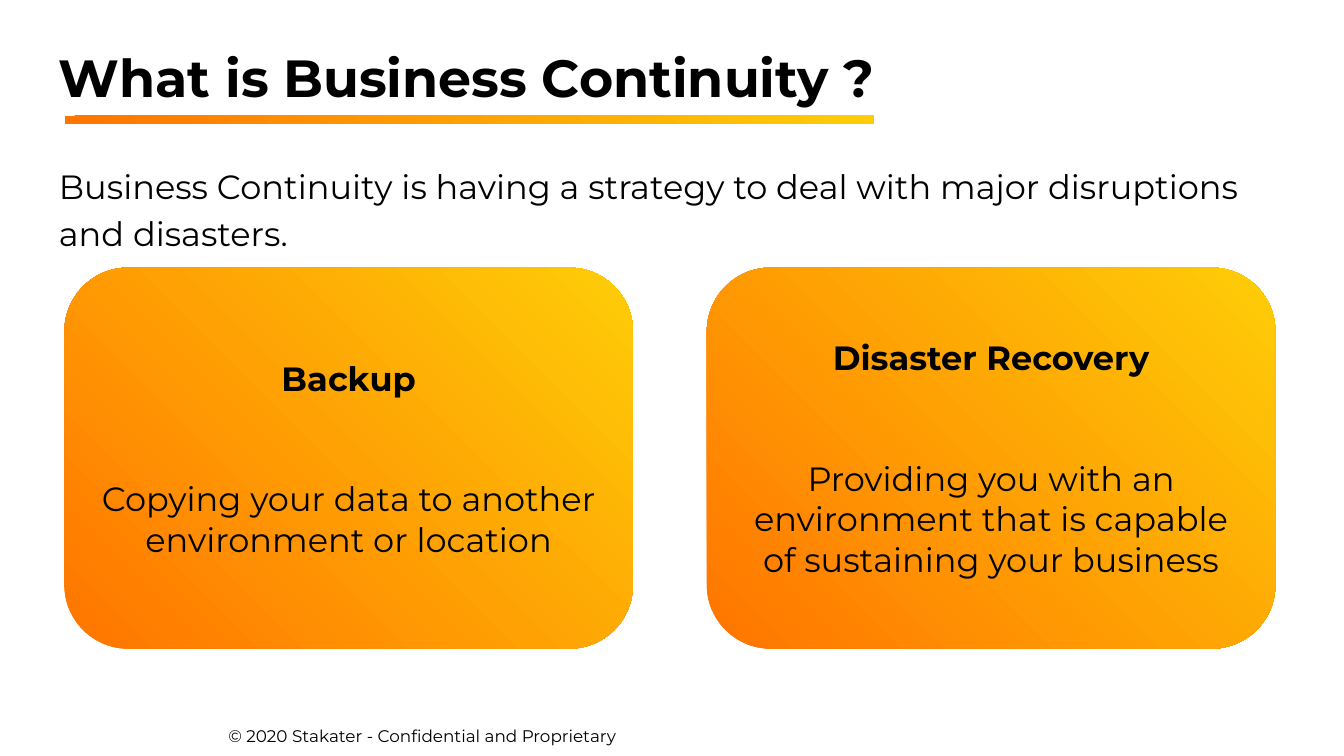
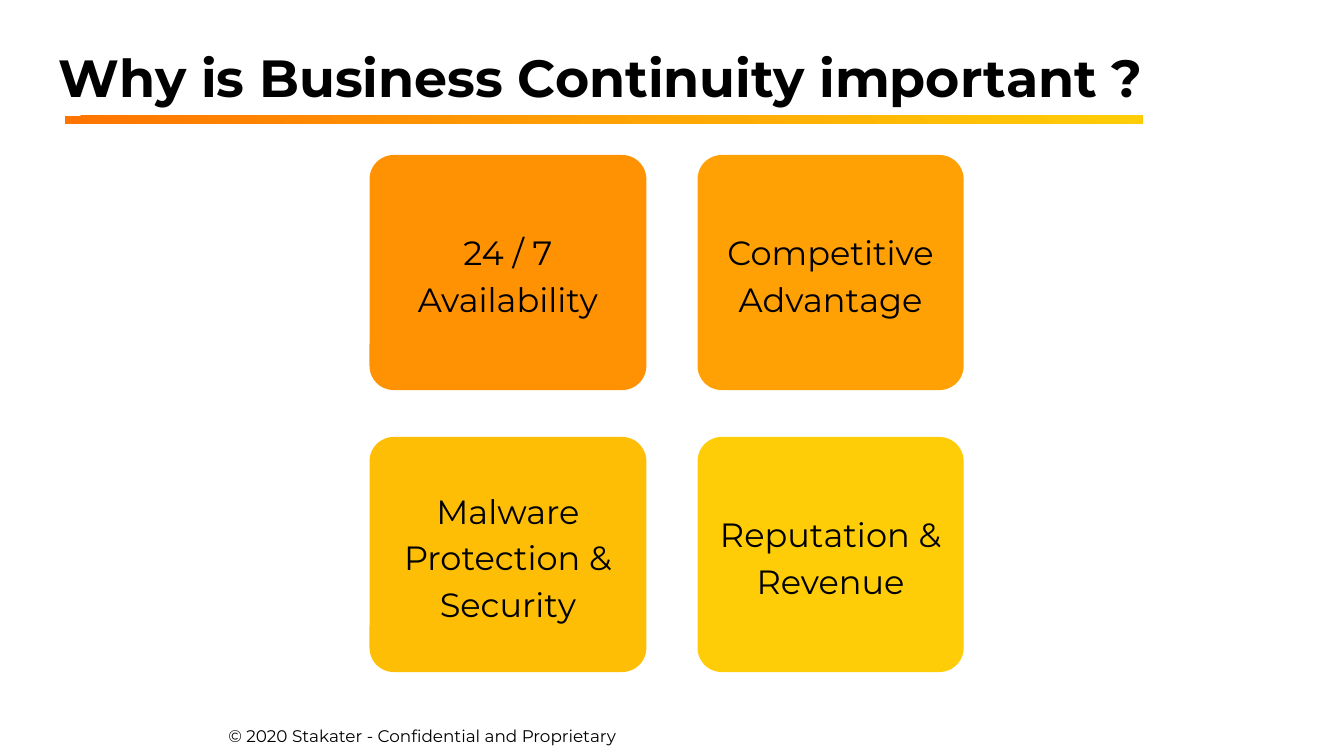
import pptx
import pptx.util
import pptx.dml.color
import pptx.enum.shapes
import pptx.enum.text

Pt = pptx.util.Pt
RGB = pptx.dml.color.RGBColor.from_string
KIND = pptx.enum.shapes.MSO_SHAPE
ALIGN = pptx.enum.text.PP_ALIGN
ANCHOR = pptx.enum.text.MSO_ANCHOR

FONT = "Montserrat"
HUES = {
    "ink": "000000",
    "orange": "FF7500",
    "yellow": "FECD07",
    "amber": "FF9202",
    "honey": "FFA104",
    "gold": "FEBE06",
}
FADE = ("orange", "yellow")

deck = pptx.Presentation()
deck.slide_width = pptx.util.Inches(10)
deck.slide_height = pptx.util.Inches(5.625)


def box(slide, area, fill=None, round=None):
    """Add a text box, or a filled shape; area is left, top, width, height in percent of the slide."""
    sides = (deck.slide_width, deck.slide_height) * 2
    place = [int(part * side / 100) for part, side in zip(area, sides)]
    if fill is None:
        shape = slide.shapes.add_textbox(*place)
    else:
        kind = KIND.ROUNDED_RECTANGLE if round else KIND.RECTANGLE
        shape = slide.shapes.add_shape(kind, *place)
        shape.shadow.inherit = False
        shape.line.fill.background()
        if round:
            shape.adjustments[0] = round
        if fill == FADE:
            shape.fill.gradient()
            shape.fill.gradient_angle = 45
            for stop, hue, spot in zip(shape.fill.gradient_stops, FADE, (0, 1)):
                stop.color.rgb = RGB(HUES[hue])
                stop.position = spot
        else:
            shape.fill.solid()
            shape.fill.fore_color.rgb = RGB(HUES[fill])
    frame = shape.text_frame
    frame.word_wrap = True
    frame.vertical_anchor = ANCHOR.MIDDLE if fill else ANCHOR.TOP
    frame.margin_left = frame.margin_right = Pt(7.2)
    frame.margin_top = frame.margin_bottom = Pt(7.2)
    return frame


def write(frame, text, size=18, bold=False, align=ALIGN.CENTER,
          lines=None, before=None, after=None):
    """Fill the first paragraph of the frame, or add one below it."""
    para = frame.paragraphs[0] if not frame.text else frame.add_paragraph()
    para.alignment = align
    para.line_spacing = lines
    if before is not None:
        para.space_before = Pt(before)
    if after is not None:
        para.space_after = Pt(after)
    run = para.add_run()
    run.text = text
    run.font.name = FONT
    run.font.size = Pt(size)
    run.font.bold = bold
    run.font.color.rgb = RGB(HUES["ink"])


# Parts on every slide: footer, title and the bar under it
heads = [
    ("What is Business Continuity ?", 60.2),
    ("Why is Business Continuity important ?", 80.2),
]
slides = []
for title, width in heads:
    slide = deck.slides.add_slide(deck.slide_layouts[6])
    write(box(slide, (13.8, 94.6, 35.2, 5.7)),
          "© 2020 Stakater - Confidential and Proprietary", size=9)
    write(box(slide, (3.4, 4.25, 93.2, 11.2)), title,
          size=28, bold=True, align=ALIGN.LEFT)
    box(slide, (4.8, 15.3, width, 1.1), fill=FADE)
    slides.append(slide)
what, why = slides

# Slide 1: the meaning and its two parts
write(box(what, (3.4, 19.4, 91.5, 7.6)),
      "Business Continuity is having a strategy to deal with major "
      "disruptions and disasters.",
      align=ALIGN.LEFT, lines=1.15, after=16)
cards = [
    ("Backup", "Copying your data to another environment or location"),
    ("Disaster Recovery", "Providing you with an environment that is capable "
                          "of sustaining your business"),
]
for col, (name, note) in enumerate(cards):
    card = box(what, (4.8 + col * 47.8, 35.4, 42.3, 50.4), fill=FADE, round=0.167)
    write(card, name, bold=True)
    write(card, note, before=43)

# Slide 2: two by two grid of reasons
cols = [(27.5, 20.6), (51.9, 19.8)]
rows = [20.5, 57.8]
tiles = [
    ("24 / 7 Availability", "amber"),
    ("Competitive Advantage", "honey"),
    ("Malware Protection & Security", "gold"),
    ("Reputation & Revenue", "yellow"),
]
for i, (name, hue) in enumerate(tiles):
    left, width = cols[i % 2]
    tile = box(why, (left, rows[i // 2], width, 31.1), fill=hue, round=0.103)
    write(tile, name, lines=1.15)

deck.save("out.pptx")
